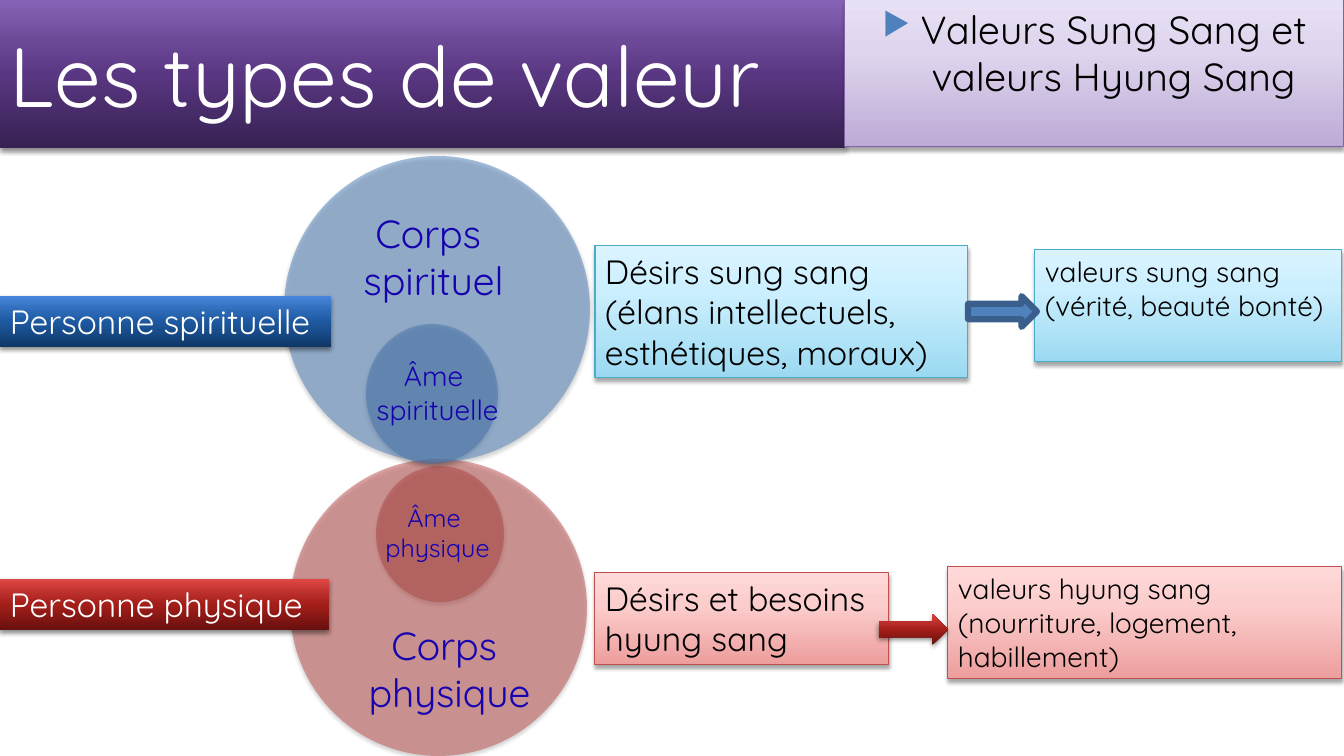
import dataclasses

import lxml.etree
import pptx
import pptx.dml.color
import pptx.enum.shapes
import pptx.enum.text
import pptx.oxml.ns
import pptx.util

PX = 12192000 / 1344
SHAPE = pptx.enum.shapes.MSO_SHAPE
ALIGN = pptx.enum.text.PP_ALIGN
ANCHOR = pptx.enum.text.MSO_ANCHOR
qn = pptx.oxml.ns.qn


@dataclasses.dataclass(frozen=True)
class Theme:
    """Colours, type sizes and shadows of the slide."""
    font: str = "Quicksand"
    title: int = 60
    large: int = 28
    medium: int = 24
    small: int = 20
    tiny: int = 18
    white: str = "FFFFFF"
    black: str = "000000"
    label: str = "1602AE"
    blue: str = "4F81BD"
    dark_blue: str = "3A5F8C"
    red: str = "C0504D"
    cyan: str = "4BACC6"
    purple: str = "8064A2"
    deep_purple: tuple = ((0, "372152"), (50, "593782"), (70, "6A4895"), (100, "8763B7"))
    pale_purple: tuple = ((0, "BCABD5"), (65, "DFD5EE"), (100, "E8E0F4"))
    deep_blue: tuple = ((0, "0F3766"), (50, "1D59A1"), (70, "2D6AB6"), (100, "4786DB"))
    deep_red: tuple = ((0, "68100E"), (50, "A41E1A"), (70, "B92E2A"), (100, "DF4845"))
    pale_cyan: tuple = ((0, "9BD9F1"), (65, "CBEFFE"), (100, "DAF4FF"))
    pale_red: tuple = ((0, "EC9E9D"), (65, "FBCDCC"), (100, "FFD9D9"))
    soft: tuple = (35, 4, 3)
    strong: tuple = (45, 5, 3)


T = Theme()


@dataclasses.dataclass(frozen=True)
class Person:
    """Content and relative places of one person's row."""
    circle: str
    soul_at: tuple
    body_at: tuple
    labels: tuple
    tag: str
    tag_at: tuple
    tag_fill: tuple
    desires: str
    desires_at: tuple
    values: str
    values_at: tuple
    card_fill: tuple
    card_line: str
    arrow_at: tuple
    arrow_fill: object
    arrow_line: tuple
    arrow_shadow: tuple


SPIRITUAL = Person(
    T.blue, (366, 168, 132, 140), (284, 0, 306, 306),
    (("Âme \nspirituelle", T.small, (365, 198, 145, 78)),
     ("Corps \nspirituel", T.large, (353, 48, 161, 105))),
    "Personne spirituelle", (0, 140, 331, 51), T.deep_blue,
    "Désirs sung sang\n(élans intellectuels, esthétiques, moraux)", (595, 90, 373, 132),
    "valeurs sung sang\n(vérité, beauté bonté)", (1035, 94, 307, 112),
    T.pale_cyan, T.cyan,
    (968, 140, 69, 31), T.blue, (T.dark_blue, 4.33), ())

PHYSICAL = Person(
    T.red, (376, 7, 128, 136), (290, 0, 297, 297),
    (("Âme \nphysique", T.tiny, (372, 38, 131, 72)),
     ("Corps \nphysique", T.large, (353, 157, 193, 105))),
    "Personne physique", (0, 120, 329, 51), T.deep_red,
    "Désirs et besoins\nhyung sang", (595, 114, 294, 92),
    "valeurs hyung sang\n(nourriture, logement, habillement)", (948, 108, 394, 112),
    T.pale_red, T.red,
    (879, 155, 69, 31), T.deep_red, (), T.strong)


def emu(px):
    """Turn pixels into EMU."""
    return pptx.util.Emu(round(px * PX))


def rgb(color):
    """Turn a hex string into a colour."""
    return pptx.dml.color.RGBColor.from_string(color)


def add(parent, tag, **attrs):
    """Append a drawing element with its attributes."""
    child = lxml.etree.SubElement(parent, qn(tag))
    for name, value in attrs.items():
        child.set(name, str(value))
    return child


def within(box, part):
    """Place a part relative to the corner of a box."""
    return (box[0] + part[0], box[1] + part[1], part[2], part[3])


def paint(sp, fill, alpha):
    """Fill a shape with a plain colour or with gradient stops."""
    if isinstance(fill, str):
        sp.fill.solid()
        sp.fill.fore_color.rgb = rgb(fill)
        if alpha < 100:
            color = sp._element.spPr.find(qn("a:solidFill"))[0]
            add(color, "a:alpha", val=alpha * 1000)
        return
    sp.fill.gradient()
    sp.fill.gradient_angle = 90
    stops = sp._element.spPr.find(qn("a:gradFill")).find(qn("a:gsLst"))
    for stop in list(stops):
        stops.remove(stop)
    for position, color in fill:
        add(add(stops, "a:gs", pos=position * 1000), "a:srgbClr", val=color)


def add_shape(s, kind, box, fill, line=(), shadow=(), alpha=100):
    """Draw a preset shape with its fill, outline and shadow."""
    sp = s.shapes.add_shape(kind, *map(emu, box))
    sp.shadow.inherit = False
    paint(sp, fill, alpha)
    if line:
        sp.line.color.rgb = rgb(line[0])
        sp.line.width = pptx.util.Pt(line[1])
    else:
        sp.line.fill.background()
    if shadow:
        opacity, blur, distance = shadow
        effects = sp._element.spPr.find(qn("a:effectLst"))
        outer = add(effects, "a:outerShdw", blurRad=emu(blur), dist=emu(distance),
                    dir=5400000, rotWithShape=0)
        add(add(outer, "a:srgbClr", val=T.black), "a:alpha", val=opacity * 1000)
    return sp


def write(sp, text, size, color, align=ALIGN.LEFT, anchor=ANCHOR.TOP, wrap=True):
    """Set and format the text of a shape."""
    tf = sp.text_frame
    tf.text = text
    tf.word_wrap = wrap
    tf.vertical_anchor = anchor
    for p in tf.paragraphs:
        p.alignment = align
        for r in p.runs:
            r.font.name = T.font
            r.font.size = pptx.util.Pt(size)
            r.font.color.rgb = rgb(color)


def add_bullet(p, char, color, indent):
    """Give a paragraph a coloured hanging bullet."""
    pPr = p._p.get_or_add_pPr()
    pPr.set("marL", str(emu(indent)))
    pPr.set("indent", str(-emu(indent)))
    add(add(pPr, "a:buClr"), "a:srgbClr", val=color)
    add(pPr, "a:buSzPct", val=80000)
    add(pPr, "a:buChar", char=char)


def add_header(s, box):
    """Draw the title band and the topic panel beside it."""
    title_width = 845
    band = add_shape(s, SHAPE.RECTANGLE, within(box, (0, 0, title_width, box[3])),
                     T.deep_purple, shadow=T.strong)
    write(band, "Les types de valeur", T.title, T.white, anchor=ANCHOR.MIDDLE)
    topic_at = within(box, (title_width, 0, box[2] - title_width, box[3] - 1))
    topic = add_shape(s, SHAPE.RECTANGLE, topic_at, T.pale_purple, (T.purple, 0.75), T.soft)
    write(topic, "Valeurs Sung Sang et valeurs Hyung Sang", T.large, T.black, ALIGN.CENTER)
    add_bullet(topic.text_frame.paragraphs[0], "▶", T.blue, 38)


def add_person(s, box, person):
    """Draw one person: circles, name tag, desires and resulting values."""
    for part in (person.soul_at, person.body_at):
        add_shape(s, SHAPE.OVAL, within(box, part), person.circle, shadow=T.soft, alpha=50)
    for text, size, part in person.labels:
        label = s.shapes.add_textbox(*map(emu, within(box, part)))
        write(label, text, size, T.label, ALIGN.CENTER, wrap=False)
    tag = add_shape(s, SHAPE.RECTANGLE, within(box, person.tag_at), person.tag_fill,
                    shadow=T.strong)
    write(tag, person.tag, T.medium, T.white)
    for text, size, part in ((person.desires, T.medium, person.desires_at),
                             (person.values, T.small, person.values_at)):
        card = add_shape(s, SHAPE.RECTANGLE, within(box, part), person.card_fill,
                         (person.card_line, 0.75), T.soft)
        write(card, text, size, T.black)
    add_shape(s, SHAPE.RIGHT_ARROW, within(box, person.arrow_at), person.arrow_fill,
              person.arrow_line, person.arrow_shadow)


def main():
    """Build the slide and save it."""
    prs = pptx.Presentation()
    prs.slide_width, prs.slide_height = emu(1344), emu(756)
    s = prs.slides.add_slide(prs.slide_layouts[6])
    add_header(s, (0, 0, 1344, 148))
    add_person(s, (0, 459, 1344, 297), PHYSICAL)
    add_person(s, (0, 156, 1344, 308), SPIRITUAL)
    prs.save("out.pptx")


if __name__ == "__main__":
    main()
